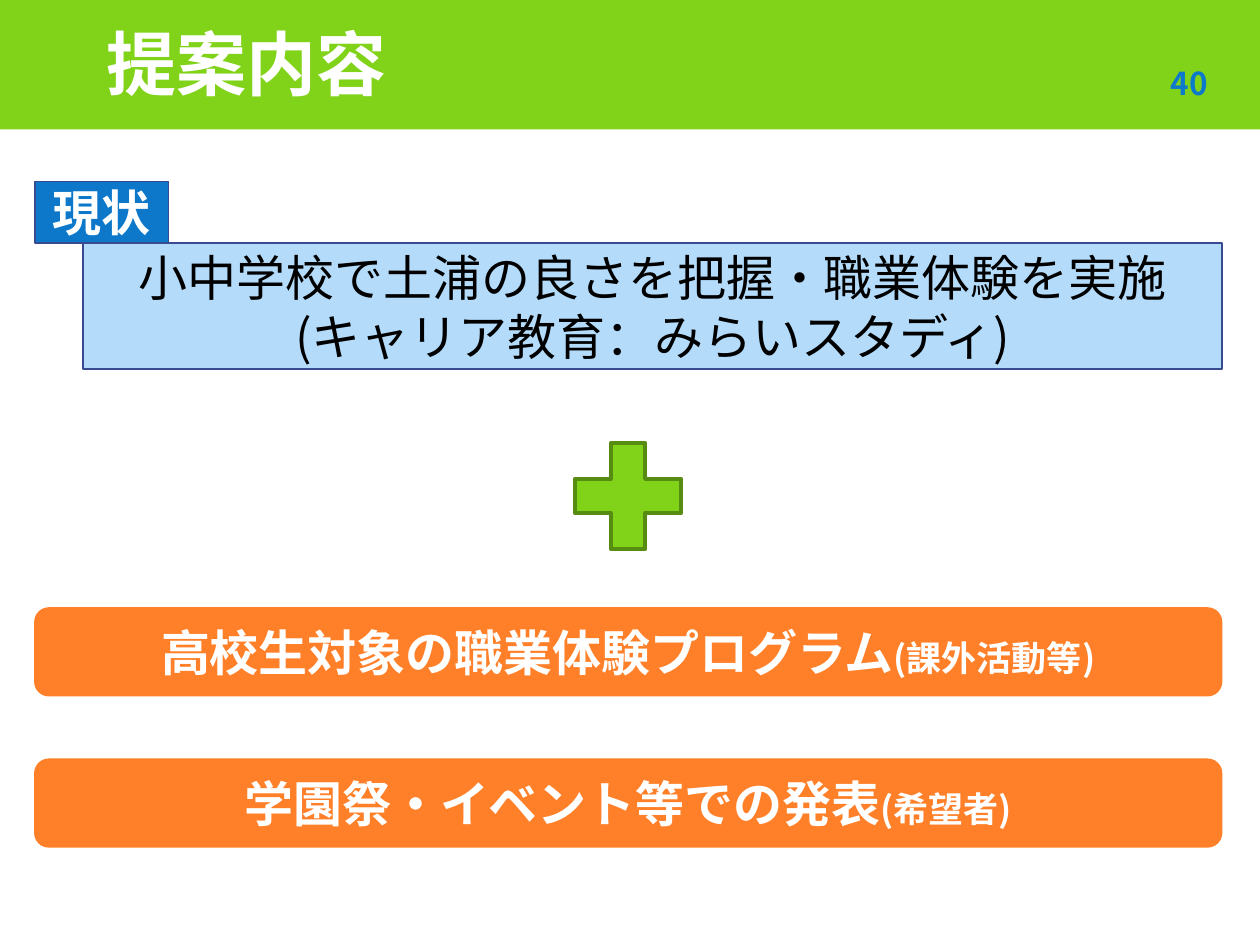
from lxml.etree import SubElement
from pptx import Presentation
from pptx.dml.color import RGBColor
from pptx.enum.shapes import MSO_SHAPE as Shape
from pptx.enum.text import MSO_ANCHOR as Anchor, PP_ALIGN as Align
from pptx.oxml.ns import qn
from pptx.util import Pt

THEME = {
    "font": "Noto Sans CJK JP",
    "white": "FFFFFF", "black": "000000",
    "band": "81D31A", "plus": "81D319", "plus_line": "568C11",
    "number": "0D79CA", "tag": "0D78C9", "panel": "B4DCFA",
    "line": "384B91", "bar": "FF8029",
    "title_size": 40, "body_size": 28, "note_size": 20, "number_size": 18,
}

TITLE = "提案内容"
NUMBER = "40"
TAG = "現状"
CURRENT = ["小中学校で土浦の良さを把握・職業体験を実施", "(キャリア教育：みらいスタディ)"]
PROPOSALS = [
    ("高校生対象の職業体験プログラム", "(課外活動等)"),
    ("学園祭・イベント等での発表", "(希望者)"),
]

WIDTH, HEIGHT = 720, 540
BAR_LEFT, BAR_TOP, BAR_WIDTH, BAR_HEIGHT, BAR_PITCH = 19.5, 347, 679, 51, 86.4


def color(name):
    return RGBColor.from_string(THEME[name])


def add_text(paragraph, text, *, size="body_size", fill="white", bold=True):
    run = paragraph.add_run()
    run.text = text
    run.font.name = THEME["font"]
    run.font.size = Pt(THEME[size])
    run.font.bold = bold
    run.font.color.rgb = color(fill)
    SubElement(run.font._element, qn("a:ea"), typeface=THEME["font"])


def write(shape, lines, *, align=Align.CENTER, left_inset=7.2, spacing=None, **style):
    frame = shape.text_frame
    frame.word_wrap = True
    frame.vertical_anchor = Anchor.MIDDLE
    frame.margin_left = Pt(left_inset)
    for index, line in enumerate(lines):
        paragraph = frame.add_paragraph() if index else frame.paragraphs[0]
        paragraph.alignment = align
        paragraph.line_spacing = spacing
        add_text(paragraph, line, **style)
    return frame


def add_block(slide, kind, box, fill, line=None, line_width=1):
    shape = slide.shapes.add_shape(kind, *map(Pt, box))
    shape.shadow.inherit = False
    shape.fill.solid()
    shape.fill.fore_color.rgb = color(fill)
    if line:
        shape.line.color.rgb = color(line)
        shape.line.width = Pt(line_width)
    else:
        shape.line.fill.background()
    return shape


def add_box(slide, box):
    return slide.shapes.add_textbox(*map(Pt, box))


def main():
    presentation = Presentation()
    presentation.slide_width, presentation.slide_height = Pt(WIDTH), Pt(HEIGHT)
    slide = presentation.slides.add_slide(presentation.slide_layouts[6])

    add_block(slide, Shape.RECTANGLE, (0, 0, WIDTH, 74), "band")
    write(add_box(slide, (54, 14.4, 612, 50.4)), [TITLE],
          align=Align.LEFT, spacing=0.85, size="title_size")
    write(add_box(slide, (665.3, 33.1, 33.8, 28.8)), [NUMBER],
          align=Align.LEFT, left_inset=3.6, size="number_size", fill="number")

    tag = add_block(slide, Shape.RECTANGLE, (20, 103.7, 76.3, 35.3), "tag", "line")
    write(tag, [TAG])
    panel = add_block(slide, Shape.RECTANGLE, (47.5, 139, 651, 72), "panel", "line")
    write(panel, CURRENT, fill="black", bold=False)

    plus = add_block(slide, Shape.MATH_PLUS, (317.5, 242, 82.8, 82.8),
                     "plus", "plus_line", 2.25)
    plus.adjustments[0] = 0.235

    for index, (proposal, note) in enumerate(PROPOSALS):
        top = BAR_TOP + index * BAR_PITCH
        bar = add_block(slide, Shape.ROUNDED_RECTANGLE,
                        (BAR_LEFT, top, BAR_WIDTH, BAR_HEIGHT), "bar")
        frame = write(bar, [proposal])
        add_text(frame.paragraphs[0], note, size="note_size")

    presentation.save("out.pptx")


if __name__ == "__main__":
    main()
